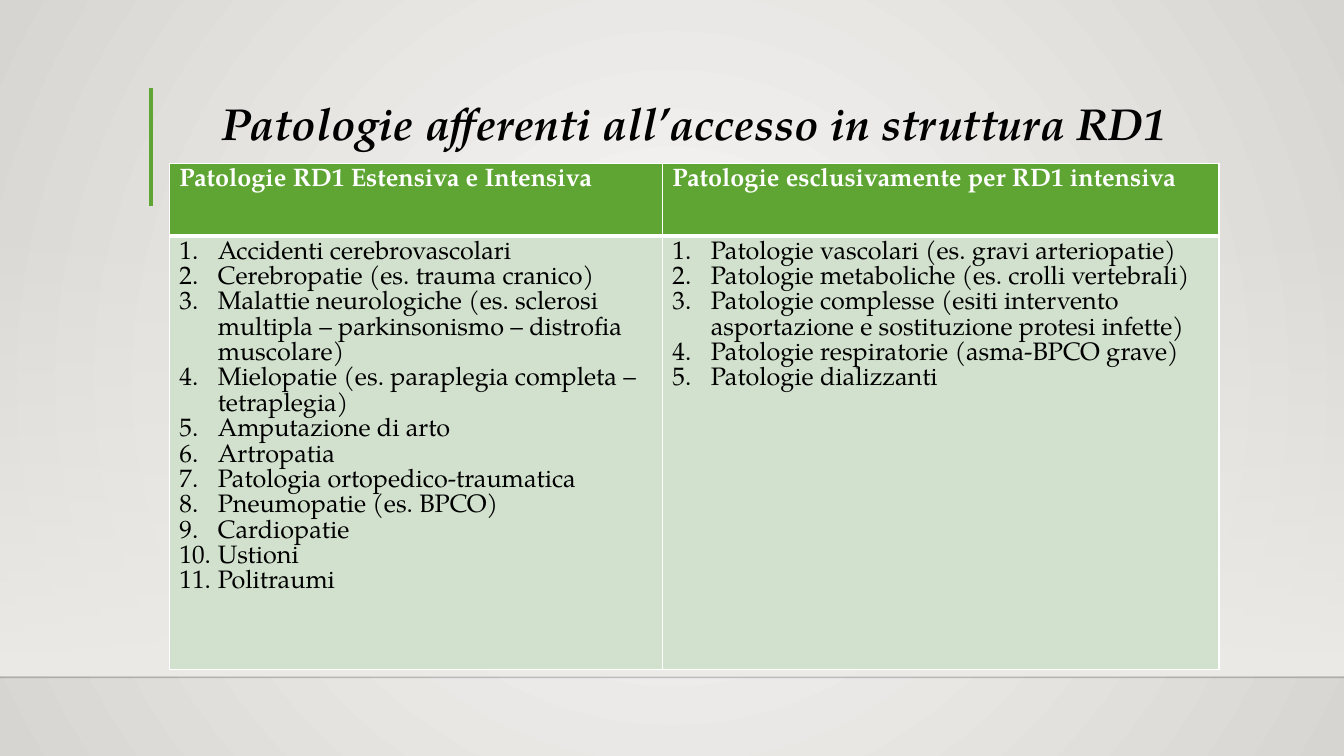
from lxml import etree
from pptx import Presentation
from pptx.dml.color import RGBColor
from pptx.enum.shapes import MSO_CONNECTOR, MSO_SHAPE
from pptx.enum.text import MSO_ANCHOR, PP_ALIGN
from pptx.oxml.ns import qn
from pptx.util import Inches, Pt

RECT = MSO_SHAPE.RECTANGLE
LINE = MSO_CONNECTOR.STRAIGHT
BOTTOM = MSO_ANCHOR.BOTTOM
CENTER = PP_ALIGN.CENTER
FONT = "TeX Gyre Pagella"
COLORS = {
    "light": "FAFAF9", "dark": "D7D5D2", "floor": "EDEBE7", "edge": "000001",
    "green": "5FA534", "pale": "D2E1CE", "white": "FFFFFF", "black": "000000",
}

TITLE = "Patologie afferenti all’accesso in struttura RD1"
HEADS = ["Patologie RD1 Estensiva e Intensiva",
         "Patologie esclusivamente per RD1 intensiva"]
LISTS = [
    ["Accidenti cerebrovascolari",
     "Cerebropatie (es. trauma cranico)",
     "Malattie neurologiche (es. sclerosi multipla – parkinsonismo – distrofia muscolare)",
     "Mielopatie (es. paraplegia completa – tetraplegia)",
     "Amputazione di arto",
     "Artropatia",
     "Patologia ortopedico-traumatica",
     "Pneumopatie (es. BPCO)",
     "Cardiopatie",
     "Ustioni",
     "Politraumi"],
    ["Patologie vascolari (es. gravi arteriopatie)",
     "Patologie metaboliche (es. crolli vertebrali)",
     "Patologie complesse (esiti intervento asportazione e sostituzione protesi infette)",
     "Patologie respiratorie (asma-BPCO grave)",
     "Patologie dializzanti"],
]
WIDTHS = [4.89, 5.52]
HEIGHTS = [0.72, 3.62]


def color(name):
    return RGBColor.from_string(COLORS[name])


def sub(parent, tag, **attrs):
    return etree.SubElement(parent, qn(tag), attrs)


def fade(node, share):
    """Set the opacity of the first colour under node, in percent."""
    sub(next(node.iter(qn("a:srgbClr"))), "a:alpha", val=str(share * 1000))


def blend(fill, first, last):
    fill.gradient()
    for stop, name in zip(fill.gradient_stops, (first, last)):
        stop.color.rgb = color(name)


def add_back(slide):
    blend(slide.background.fill, "light", "dark")
    grad = next(slide.element.iter(qn("a:gradFill")))
    grad.remove(grad.find(qn("a:lin")))
    ring = sub(grad, "a:path", path="circle")
    sub(ring, "a:fillToRect", l="50000", t="50000", r="50000", b="50000")


def add_floor(slide):
    shape = slide.shapes.add_shape(RECT, 0, Inches(2.2), Inches(13.33), Inches(4.5))
    shape.shadow.inherit = False
    shape.line.fill.background()
    blend(shape.fill, "floor", "floor")
    shape.fill.gradient_angle = 270
    fade(shape.element.spPr, 0)


def add_line(slide, ends, name, width, share=100):
    line = slide.shapes.add_connector(LINE, *map(Inches, ends))
    line.line.color.rgb = color(name)
    line.line.width = Pt(width)
    if share < 100:
        fade(line.element.spPr, share)
    sub(line.element.spPr, "a:effectLst")


def add_run(para, text, size, name, bold=False, italic=False):
    run = para.add_run()
    run.text = text
    font = run.font
    font.name, font.size = FONT, Pt(size)
    font.bold, font.italic = bold, italic
    font.color.rgb = color(name)


def add_title(slide):
    box = slide.shapes.add_textbox(Inches(1.68), Inches(0.88), Inches(10.41), Inches(0.66))
    frame = box.text_frame
    frame.word_wrap = True
    frame.vertical_anchor = BOTTOM
    para = frame.paragraphs[0]
    para.alignment = CENTER
    para.line_spacing = 0.9
    add_run(para, TITLE, 32, "black", bold=True, italic=True)


def style_cell(cell, name, top, bottom):
    cell.fill.solid()
    cell.fill.fore_color.rgb = color(name)
    props = cell._tc.get_or_add_tcPr()
    sides = {"L": 1, "R": 1, "T": top, "B": bottom}
    for spot, (side, width) in enumerate(sides.items()):
        edge = sub(props, f"a:ln{side}", w=str(Pt(width)))
        sub(sub(edge, "a:solidFill"), "a:srgbClr", val=COLORS["white"])
        props.insert(spot, edge)


def add_items(frame, items):
    for i, item in enumerate(items):
        para = frame.add_paragraph() if i else frame.paragraphs[0]
        props = para._p.get_or_add_pPr()
        props.set("marL", str(Inches(0.38)))
        props.set("indent", str(Inches(-0.38)))
        sub(props, "a:buFont", typeface="+mj-lt")
        sub(props, "a:buAutoNum", type="arabicPeriod")
        add_run(para, item, 18, "black")


def add_grid(slide):
    frame = slide.shapes.add_table(2, 2, Inches(1.68), Inches(1.62),
                                   Inches(sum(WIDTHS)), Inches(sum(HEIGHTS)))
    table = frame.table
    for row, height in zip(table.rows, HEIGHTS):
        row.height = Inches(height)
    for i, (head, items) in enumerate(zip(HEADS, LISTS)):
        table.columns[i].width = Inches(WIDTHS[i])
        top, body = table.cell(0, i), table.cell(1, i)
        style_cell(top, "green", 1, 3)
        style_cell(body, "pale", 3, 1)
        add_run(top.text_frame.paragraphs[0], head, 18, "white", bold=True)
        add_items(body.text_frame, items)


def main():
    deck = Presentation()
    deck.slide_width, deck.slide_height = Inches(13.33), Inches(7.5)
    slide = deck.slides.add_slide(deck.slide_layouts[6])
    # Backdrop
    add_back(slide)
    add_floor(slide)
    add_line(slide, (0, 6.72, 13.33, 6.72), "edge", 1, 20)
    # Title with its accent bar
    add_line(slide, (1.5, 0.87, 1.5, 2.04), "green", 3)
    add_title(slide)
    # Table of conditions
    add_grid(slide)
    deck.save("out.pptx")


if __name__ == "__main__":
    main()
